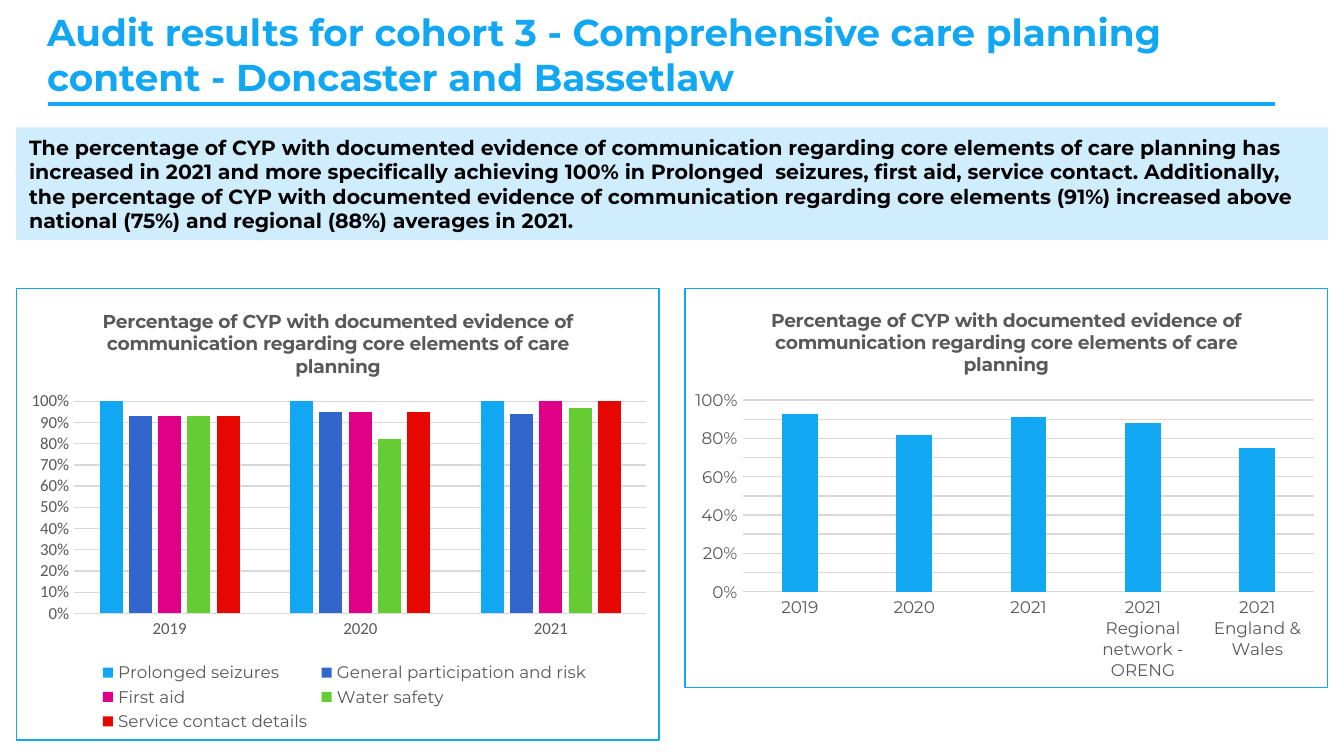
from lxml import etree
from pptx import Presentation
from pptx.chart.data import CategoryChartData
from pptx.dml.color import RGBColor
from pptx.enum.chart import XL_CHART_TYPE, XL_LEGEND_POSITION, XL_TICK_MARK
from pptx.enum.shapes import MSO_CONNECTOR, MSO_SHAPE
from pptx.enum.text import MSO_ANCHOR, PP_ALIGN
from pptx.oxml import parse_xml
from pptx.oxml.ns import nsdecls, qn
from pptx.util import Cm, Pt

COLUMNS = XL_CHART_TYPE.COLUMN_CLUSTERED
BOTTOM = XL_LEGEND_POSITION.BOTTOM
NO_TICK = XL_TICK_MARK.NONE
STRAIGHT = MSO_CONNECTOR.STRAIGHT
RECT = MSO_SHAPE.RECTANGLE
MIDDLE = MSO_ANCHOR.MIDDLE
LEFT = PP_ALIGN.LEFT

HEX = {
    "sky": "11A7F2", "blue": "3366CC", "pink": "E00087", "green": "66CC33",
    "red": "E60700", "pale": "CFEDFC", "black": "000000", "grey": "595959",
    "grid": "D9D9D9",
}
FONT = "Montserrat"

TITLE = ("Audit results for cohort 3 - Comprehensive care planning content"
         " - Doncaster and Bassetlaw")
SUMMARY = (
    "The percentage of CYP with documented evidence of communication regarding "
    "core elements of care planning has increased in 2021 and more specifically "
    "achieving 100% in Prolonged  seizures, first aid, service contact. "
    "Additionally, the percentage of CYP with documented evidence of "
    "communication regarding core elements (91%) increased above national (75%) "
    "and regional (88%) averages in 2021.")
HEADING = ("Percentage of CYP with documented evidence of communication "
           "regarding core elements of care planning")

# plot and legend: left, top, width, height as shares of the chart
CHARTS = [
    {
        "height": 8.56, "font": "Calibri",
        "plot": (0.09, 0.25, 0.89, 0.47), "legend": (0.12, 0.82, 0.78, 0.17),
        "cats": ["2019", "2020", "2021"],
        "series": [
            ("Prolonged seizures", (1, 1, 1), "sky"),
            ("General participation and risk", (0.93, 0.95, 0.94), "blue"),
            ("First aid", (0.93, 0.95, 1), "pink"),
            ("Water safety", (0.93, 0.82, 0.97), "green"),
            ("Service contact details", (0.93, 0.95, 1), "red"),
        ],
    },
    {
        "height": 7.57, "font": FONT,
        "plot": (0.09, 0.28, 0.89, 0.48), "legend": None,
        "cats": ["2019", "2020", "2021", "2021 Regional network - ORENG",
                 "2021 England & Wales"],
        "series": [("Series 1", (0.93, 0.82, 0.91, 0.88, 0.75), "sky")],
    },
]

WIDE, HIGH = 25.4, 14.29
EDGE, CHART_W, CHART_TOP = 0.3, 12.17, 5.44


def rgb(name):
    return RGBColor.from_string(HEX[name])


def style(font, size, color, bold=False, face=FONT):
    font.name, font.size, font.bold = face, Pt(size), bold
    font.color.rgb = rgb(color)


def fill_text(shape, text, size, color):
    frame = shape.text_frame
    frame.word_wrap = True
    frame.vertical_anchor = MIDDLE
    para = frame.paragraphs[0]
    para.alignment = LEFT
    run = para.add_run()
    run.text = text
    style(run.font, size, color, True)


def lay_out(part, box, inner=False):
    """Fix the place of a plot area or legend inside its chart."""
    for old in part.findall(qn("c:layout")):
        part.remove(old)
    layout = etree.Element(qn("c:layout"))
    manual = etree.SubElement(layout, qn("c:manualLayout"))
    rules = [("layoutTarget", "inner")] if inner else []
    rules += [("xMode", "edge"), ("yMode", "edge")]
    rules += zip("xywh", box)
    for tag, val in rules:
        etree.SubElement(manual, qn("c:" + tag)).set("val", str(val))
    part.insert(0 if inner else 1, layout)


def add_border(chart):
    chart._chartSpace.find(qn("c:chart")).addnext(parse_xml(
        f'<c:spPr {nsdecls("c", "a")}><a:noFill/><a:ln w="{Pt(0.75)}">'
        f'<a:solidFill><a:srgbClr val="{HEX["sky"]}"/></a:solidFill>'
        '</a:ln></c:spPr>'))


def set_axes(chart, face):
    cat, val = chart.category_axis, chart.value_axis
    for axis in (cat, val):
        axis.major_tick_mark = axis.minor_tick_mark = NO_TICK
        style(axis.tick_labels.font, 9, "grey", face=face)
    val.minimum_scale, val.maximum_scale, val.major_unit = 0, 1, 0.1
    val.tick_labels.number_format = "0%"
    val.tick_labels.number_format_is_linked = False
    val.format.line.fill.background()
    for line in (cat.format.line, val.major_gridlines.format.line):
        line.color.rgb = rgb("grid")
        line.width = Pt(0.75)


def draw_chart(shapes, left, item):
    data = CategoryChartData(number_format="0%")
    data.categories = item["cats"]
    for name, vals, _ in item["series"]:
        data.add_series(name, vals)
    chart = shapes.add_chart(COLUMNS, Cm(left), Cm(CHART_TOP), Cm(CHART_W),
                             Cm(item["height"]), data).chart
    style(chart.font, 10, "black", face="Calibri")
    add_border(chart)

    run = chart.chart_title.text_frame.paragraphs[0].add_run()
    run.text = HEADING
    style(run.font, 10, "grey", True)
    chart.chart_title.include_in_layout = False

    set_axes(chart, item["font"])
    plot = chart.plots[0]
    plot.gap_width, plot.overlap, plot.vary_by_categories = 219, -27, False
    for series, (_, _, color) in zip(plot.series, item["series"]):
        series.format.fill.solid()
        series.format.fill.fore_color.rgb = rgb(color)
    lay_out(chart._chartSpace.chart.plotArea, item["plot"], True)

    chart.has_legend = item["legend"] is not None
    if chart.has_legend:
        chart.legend.position = BOTTOM
        chart.legend.include_in_layout = False
        style(chart.legend.font, 9, "grey")
        lay_out(chart.legend._element, item["legend"])


def main():
    deck = Presentation()
    deck.slide_width, deck.slide_height = Cm(WIDE), Cm(HIGH)
    shapes = deck.slides.add_slide(deck.slide_layouts[6]).shapes

    rule = shapes.add_connector(STRAIGHT, Cm(0.9), Cm(1.97), Cm(24.1), Cm(1.97))
    rule.line.color.rgb = rgb("sky")
    rule.line.width = Pt(2.25)
    etree.SubElement(rule._element.spPr, qn("a:effectLst"))

    title = shapes.add_textbox(Cm(0.64), Cm(0.36), Cm(22.86), Cm(1.32))
    fill_text(title, TITLE, 20, "sky")

    panel = shapes.add_shape(RECT, Cm(EDGE), Cm(2.41),
                             Cm(WIDE - 2 * EDGE), Cm(2.13))
    panel.shadow.inherit = False
    panel.fill.solid()
    panel.fill.fore_color.rgb = rgb("pale")
    panel.line.fill.background()
    fill_text(panel, SUMMARY, 11, "black")

    for left, item in zip((EDGE, WIDE - EDGE - CHART_W), CHARTS):
        draw_chart(shapes, left, item)

    deck.save("out.pptx")


if __name__ == "__main__":
    main()
